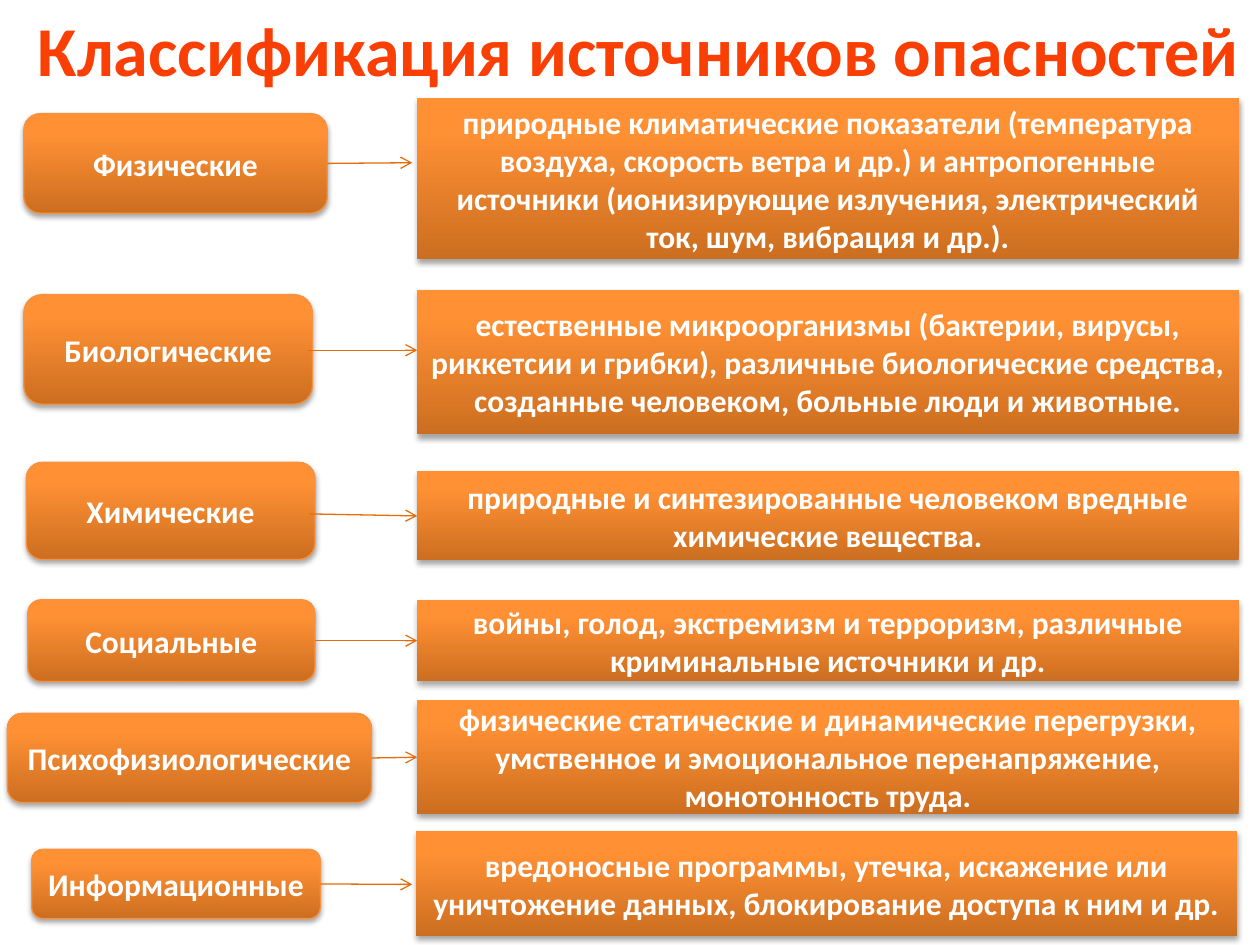
import copy

import lxml.etree
import pptx
import pptx.dml.color
import pptx.enum.shapes
import pptx.enum.text
import pptx.oxml
import pptx.oxml.ns
import pptx.util

Cm = pptx.util.Cm
Pt = pptx.util.Pt
qn = pptx.oxml.ns.qn
KIND = pptx.enum.shapes.MSO_SHAPE
NS = pptx.oxml.ns.nsdecls("a")

SHADE = (
    f'<a:outerShdw {NS} blurRad="40000" dist="23000" dir="5400000" rotWithShape="0">'
    '<a:srgbClr val="000000"><a:alpha val="35000"/></a:srgbClr></a:outerShdw>'
)
TRIM = (
    f'<a:ln {NS} w="10541"><a:solidFill><a:srgbClr val="FAC090"/>'
    "</a:solidFill></a:ln>"
)

# Each row: name, its box, text, its box, arrow start and end.
# None joins the arrow to the middle of the box side.
ROWS = [
    ("Физические", (0.48, 2.29, 6.12, 2.01),
     "природные климатические показатели (температура воздуха, скорость ветра и др.) "
     "и антропогенные источники (ионизирующие излучения, электрический ток, шум, "
     "вибрация и др.).",
     (8.41, 1.98, 16.56, 3.25), None, (8.31, 3.28)),
    ("Биологические", (0.48, 5.94, 5.82, 2.21),
     "естественные микроорганизмы (бактерии, вирусы, риккетсии и грибки), различные "
     "биологические средства, созданные человеком, больные люди и животные.",
     (8.41, 5.84, 16.56, 2.92), (6.2, 7.06), (8.41, 7.06)),
    ("Химические", (0.53, 9.32, 5.82, 1.96),
     "природные и синтезированные человеком вредные химические вещества.",
     (8.41, 9.5, 16.56, 1.8), (6.25, 10.36), None),
    ("Социальные", (0.56, 12.09, 5.79, 1.65),
     "войны, голод, экстремизм и терроризм, различные криминальные источники и др.",
     (8.41, 12.09, 16.56, 1.65), None, None),
    ("Психофизиологические", (0.15, 14.38, 7.34, 1.8),
     "физические статические и динамические перегрузки, умственное и эмоциональное "
     "перенапряжение, монотонность труда.",
     (8.41, 14.12, 16.56, 2.29), None, None),
    ("Информационные", (0.64, 17.12, 5.82, 1.4),
     "вредоносные программы, утечка, искажение или уничтожение данных, блокирование "
     "доступа к ним и др.",
     (8.38, 16.76, 16.56, 2.11), None, (8.31, 17.83)),
]


def tint(code):
    return pptx.dml.color.RGBColor.from_string(code)


class Deck:
    font = "Calibri"
    stops = [(0, "CC6E20"), (0.8, "FF9034"), (1, "FF9136")]
    edge = "F69240"
    wire = "E46C0A"

    def __init__(self, slide):
        self.slide = slide

    def label(self, frame, text, size, color):
        par = frame.paragraphs[0]
        par.alignment = pptx.enum.text.PP_ALIGN.CENTER
        par.font.name = self.font
        par.font.size = Pt(size)
        par.font.bold = True
        par.font.color.rgb = tint(color)
        run = par.add_run()
        run.text = text
        return run

    def title(self, text, place):
        box = self.slide.shapes.add_textbox(*map(Cm, place))
        frame = box.text_frame
        frame.word_wrap = False
        frame.auto_size = pptx.enum.text.MSO_AUTO_SIZE.SHAPE_TO_FIT_TEXT
        run = self.label(frame, text, 40, "FA3F04")
        run._r.get_or_add_rPr().insert(0, pptx.oxml.parse_xml(TRIM))

    def glow(self, shape):
        """Fill with the three-stop gradient and cast the soft shadow."""
        shape.fill.gradient()
        props = shape._element.spPr
        stops = props.find(".//" + qn("a:gsLst"))
        stops.append(copy.deepcopy(stops[-1]))
        for stop, (place, color) in zip(shape.fill.gradient_stops, self.stops):
            stop.position = place
            stop.color.rgb = tint(color)
        shape.fill.gradient_angle = 90
        shape.shadow.inherit = False
        props.find(qn("a:effectLst")).append(pptx.oxml.parse_xml(SHADE))

    def box(self, kind, text, place, edge=None):
        shape = self.slide.shapes.add_shape(kind, *map(Cm, place))
        self.glow(shape)
        if edge:
            shape.line.color.rgb = tint(edge)
            shape.line.width = Pt(0.75)
        else:
            shape.line.fill.background()
        frame = shape.text_frame
        frame.word_wrap = True
        frame.vertical_anchor = pptx.enum.text.MSO_ANCHOR.MIDDLE
        self.label(frame, text, 18, "FFFFFF")
        return shape

    def arrow(self, left, right, start, end):
        """Run from left box to right box, or between the points given."""
        line = self.slide.shapes.add_connector(
            pptx.enum.shapes.MSO_CONNECTOR.STRAIGHT,
            *map(Cm, start or (0, 0)), *map(Cm, end or (0, 0)))
        if start is None:
            line.begin_connect(left, 3)
        if end is None:
            line.end_connect(right, 1)
        line.line.color.rgb = tint(self.wire)
        line.line.width = Pt(0.75)
        props = line._element.spPr
        lxml.etree.SubElement(props.find(qn("a:ln")), qn("a:tailEnd"), type="arrow")
        lxml.etree.SubElement(props, qn("a:effectLst"))


def main():
    show = pptx.Presentation()
    show.slide_width = Cm(25.4)
    show.slide_height = Cm(19.05)
    deck = Deck(show.slides.add_slide(show.slide_layouts[6]))
    deck.title("Классификация источников опасностей", (0.38, 0, 24.97, 1.96))
    for name, spot, text, place, start, end in ROWS:
        left = deck.box(KIND.ROUNDED_RECTANGLE, name, spot, deck.edge)
        right = deck.box(KIND.RECTANGLE, text, place)
        deck.arrow(left, right, start, end)
    show.save("out.pptx")


if __name__ == "__main__":
    main()
